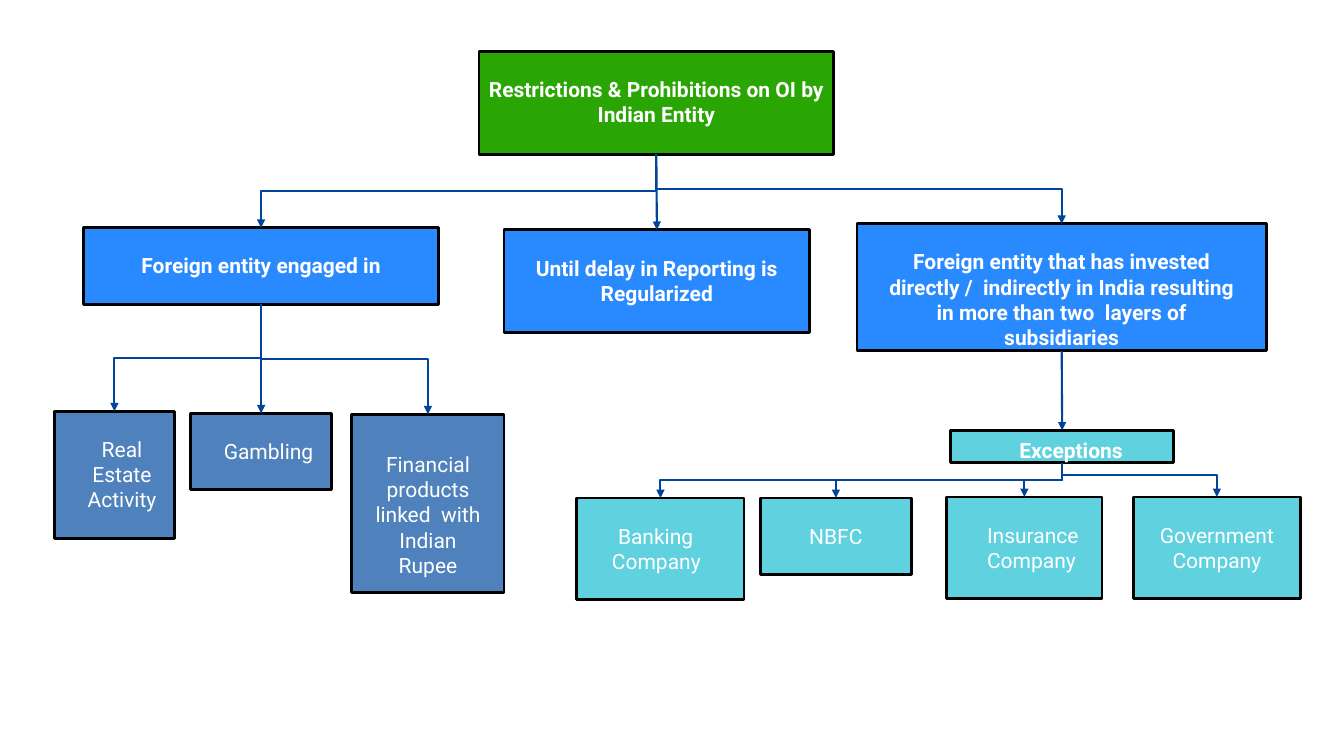
from lxml import etree
from pptx import Presentation
from pptx.dml.color import RGBColor
from pptx.enum.shapes import MSO_CONNECTOR, MSO_SHAPE
from pptx.enum.text import MSO_ANCHOR, PP_ALIGN
from pptx.oxml.ns import qn
from pptx.util import Pt

PX = 9144
RECT = MSO_SHAPE.RECTANGLE
STRAIGHT, ELBOW = MSO_CONNECTOR.STRAIGHT, MSO_CONNECTOR.ELBOW
TOP = MSO_ANCHOR.TOP
LEFT, CENTER = PP_ALIGN.LEFT, PP_ALIGN.CENTER

GREEN = RGBColor(0x29, 0xA6, 0x03)
BLUE = RGBColor(0x29, 0x89, 0xFF)
STEEL = RGBColor(0x4F, 0x81, 0xBC)
TEAL = RGBColor(0x60, 0xD1, 0xDF)
NAVY = RGBColor(0x00, 0x45, 0x99)
BLACK = RGBColor(0, 0, 0)
WHITE = RGBColor(0xFF, 0xFF, 0xFF)

BOXES = {
    "root": ((475, 51, 352, 102), GREEN,
             "Restrictions & Prohibitions on OI by Indian Entity", {"bold": True}),
    "engaged": ((83, 226, 352, 76), BLUE, "Foreign entity engaged in", {"bold": True}),
    "delay": ((500, 228, 303, 102), BLUE,
              "Until delay in Reporting is\nRegularized", {"bold": True}),
    "layers": ((850, 222, 406, 126), BLUE,
               "Foreign entity that has invested directly /  indirectly in India "
               "resulting in more than two  layers of subsidiaries",
               {"bold": True, "left": 30, "right": 30}),
    "estate": ((54, 408, 119, 126), STEEL, "Real Estate Activity",
               {"left": 31, "right": 16, "indent": -14}),
    "gambling": ((189, 410, 140, 76), STEEL, "Gambling", {"left": 33, "align": LEFT}),
    "financial": ((349, 411, 151, 177), STEEL,
                  "Financial products linked  with Indian Rupee",
                  {"left": 20, "right": 20, "top": 37}),
    "exceptions": ((943, 427, 221, 32), TEAL, "Exceptions",
                   {"bold": True, "left": 68, "top": 7, "align": LEFT}),
    "banking": ((572, 494, 166, 101), TEAL, "Banking Company",
                {"left": 35, "indent": 6, "align": LEFT}),
    "nbfc": ((754, 494, 150, 76), TEAL, "NBFC", {}),
    "insurance": ((939, 493, 154, 101), TEAL, "Insurance\nCompany",
                  {"left": 40, "align": LEFT}),
    "government": ((1124, 493, 166, 101), TEAL, "Government\nCompany", {}),
}

LINKS = {
    "root": ("engaged", "layers", "delay"),
    "engaged": ("gambling", "financial", "estate"),
    "layers": ("exceptions",),
    "exceptions": ("banking", "nbfc", "insurance"),
}


def px(*values):
    return [round(v * PX) for v in values]


def set_attrs(obj, values):
    for name, value in values.items():
        setattr(obj, name, value)


def add_box(s, place, color, text, bold=False, left=0, right=0, top=25,
            indent=0, align=CENTER):
    sp = s.shapes.add_shape(RECT, *px(*place))
    sp.shadow.inherit = False
    sp.fill.solid()
    sp.fill.fore_color.rgb = color
    sp.line.color.rgb = BLACK
    sp.line.width = Pt(2)
    tf = sp.text_frame
    margin_left, margin_right, margin_top = px(left, right, top)
    set_attrs(tf, {"word_wrap": True, "vertical_anchor": TOP,
                   "margin_left": margin_left, "margin_right": margin_right,
                   "margin_top": margin_top, "margin_bottom": 0})
    for i, line in enumerate(text.split("\n")):
        p = tf.add_paragraph() if i else tf.paragraphs[0]
        p.alignment = align
        if indent:
            p._p.get_or_add_pPr().set("indent", str(indent * PX))
        r = p.add_run()
        r.text = line
        set_attrs(r.font, {"name": "Roboto", "size": Pt(15), "bold": bold})
        r.font.color.rgb = WHITE


def add_arrow(s, kind, x1, y1, x2, y2):
    cxn = s.shapes.add_connector(kind, *px(x1, y1, x2, y2))
    cxn.line.color.rgb = NAVY
    cxn.line.width = Pt(1.5)
    etree.SubElement(cxn.line._get_or_add_ln(), qn("a:tailEnd"), type="triangle")
    etree.SubElement(cxn._element.spPr, qn("a:effectLst"))
    return cxn


def add_down_elbow(s, x1, y1, x2, y2):
    across, down = abs(x2 - x1), y2 - y1
    left = (x1 + x2 - down) / 2
    top = (y1 + y2 - across) / 2
    cxn = add_arrow(s, ELBOW, left, top, left + down, top + across)
    xfrm = cxn._element.spPr.find(qn("a:xfrm"))
    xfrm.set("rot", str((90 if x2 < x1 else 270) * 60000))
    if x2 > x1:
        xfrm.set("flipH", "1")


def add_corner(s, x1, y1, x2, y2):
    cxn = add_arrow(s, ELBOW, x1, y1, x2, y2)
    cxn._element.spPr.find(qn("a:prstGeom")).set("prst", "bentConnector2")


def link(s, parent, child):
    x, y, w, h = BOXES[parent][0]
    cx, cy, cw, _ = BOXES[child][0]
    ends = x + w / 2, y + h, cx + cw / 2, cy
    if abs(ends[0] - ends[2]) < 2:
        add_arrow(s, STRAIGHT, *ends)
    else:
        add_down_elbow(s, *ends)


def main():
    prs = Presentation()
    prs.slide_width, prs.slide_height = px(1333, 750)
    s = prs.slides.add_slide(prs.slide_layouts[6])
    for place, color, text, options in BOXES.values():
        add_box(s, place, color, text, **options)
    for parent, children in LINKS.items():
        for child in children:
            link(s, parent, child)
    add_corner(s, 1054, 471, 1207, 493)
    prs.save("out.pptx")


if __name__ == "__main__":
    main()
